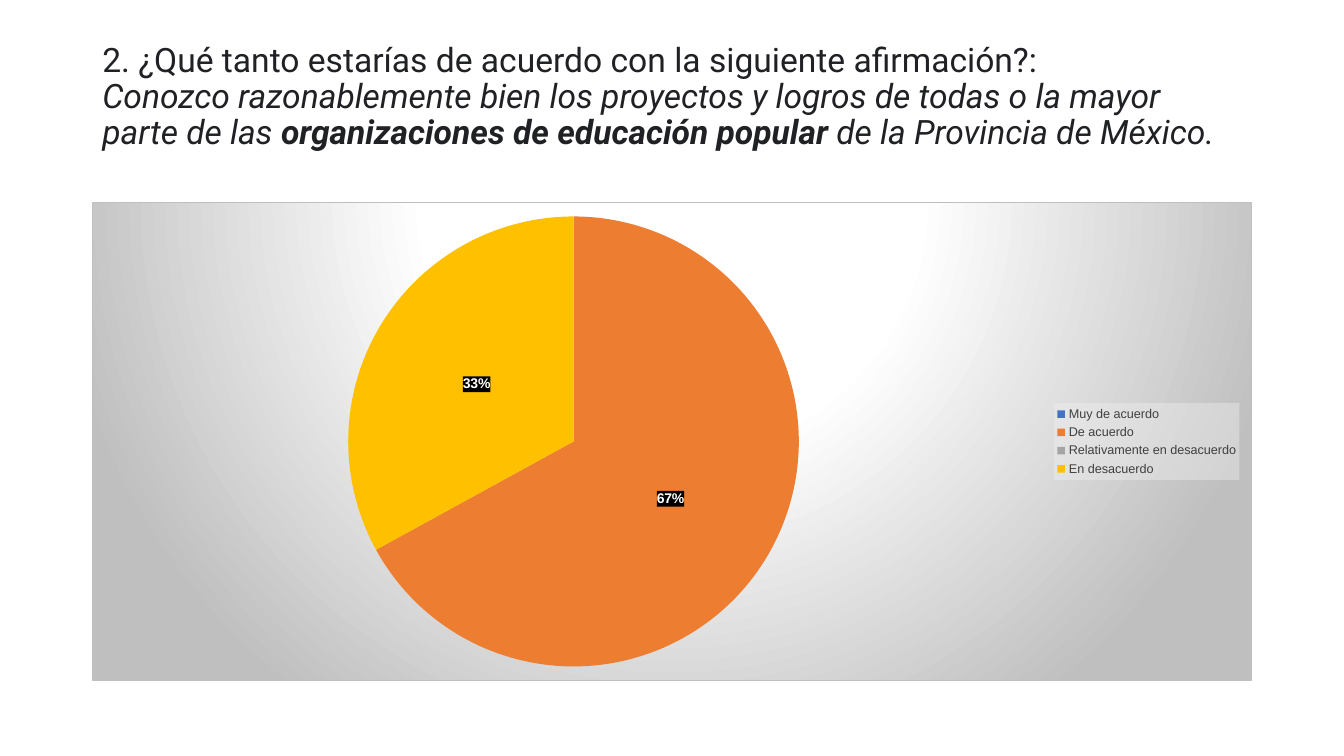
from pptx import Presentation
from pptx.chart.data import CategoryChartData
from pptx.dml.color import RGBColor
from pptx.enum.chart import XL_CHART_TYPE as CT, XL_LABEL_POSITION as LP, XL_LEGEND_POSITION as LG
from pptx.enum.text import MSO_ANCHOR
from pptx.oxml import parse_xml
from pptx.oxml.ns import nsdecls, qn
from pptx.util import Pt

QUESTION = "2. ¿Qué tanto estarías de acuerdo con la siguiente afirmación?:"
STATEMENT = [
    ("Conozco razonablemente bien los proyectos y logros de todas o la mayor parte de las ", False),
    ("organizaciones de educación popular", True),
    (" de la Provincia de México.", False),
]
INK = RGBColor(0x20, 0x21, 0x24)
BLACK = RGBColor(0, 0, 0)
WHITE = RGBColor(0xFF, 0xFF, 0xFF)
LEGEND_INK = RGBColor(0x40, 0x40, 0x40)
ANSWERS = [
    ("Muy de acuerdo", 0, RGBColor(0x44, 0x72, 0xC4)),
    ("De acuerdo", 67, RGBColor(0xED, 0x7D, 0x31)),
    ("Relativamente en desacuerdo", 0, RGBColor(0xA5, 0xA5, 0xA5)),
    ("En desacuerdo", 33, RGBColor(0xFF, 0xC0, 0x00)),
]
LEFT, WIDTH = Pt(66), Pt(828)
PIE_AREA = (0.22, 0.03, 0.39, 0.94)
LEGEND_AREA = (0.83, 0.42, 0.16, 0.16)
BACKDROP = (
    '<a:gradFill><a:gsLst>'
    '<a:gs pos="0"><a:srgbClr val="FFFFFF"/></a:gs>'
    '<a:gs pos="39000"><a:srgbClr val="FFFFFF"/></a:gs>'
    '<a:gs pos="100000"><a:srgbClr val="BFBFBF"/></a:gs></a:gsLst>'
    '<a:path path="circle"><a:fillToRect l="50000" t="-80000" r="50000" b="180000"/></a:path>'
    '</a:gradFill><a:ln w="9525"><a:solidFill><a:srgbClr val="BFBFBF"/></a:solidFill></a:ln>'
)


def chart_xml(tag, body):
    return parse_xml(f'<c:{tag} {nsdecls("c", "a")}>{body}</c:{tag}>')


def tint(color, alpha):
    return chart_xml("spPr", f'<a:solidFill><a:srgbClr val="{color}">'
                     f'<a:alpha val="{alpha * 1000}"/></a:srgbClr></a:solidFill>')


def layout(area, target=""):
    x, y, w, h = area
    return chart_xml("layout", f'<c:manualLayout>{target}<c:xMode val="edge"/><c:yMode val="edge"/>'
                     f'<c:x val="{x}"/><c:y val="{y}"/><c:w val="{w}"/><c:h val="{h}"/></c:manualLayout>')


def drop_layout(element):
    for old in element.findall(qn("c:layout")):
        element.remove(old)


def set_font(font, size, color, name="Arial", bold=False):
    font.size, font.name, font.bold = Pt(size), name, bold
    font.color.rgb = color


def add_title(s):
    tf = s.shapes.add_textbox(LEFT, Pt(28.8), WIDTH, Pt(104.4)).text_frame
    tf.word_wrap = True
    tf.vertical_anchor = MSO_ANCHOR.TOP
    tf.margin_top = Pt(2)
    p = tf.paragraphs[0]
    p.line_spacing = 0.9
    r = p.add_run()
    r.text = QUESTION
    set_font(r.font, 24, INK, "Roboto")
    p.add_line_break()
    for text, bold in STATEMENT:
        r = p.add_run()
        r.text = text
        set_font(r.font, 24, INK, "Roboto", bold)
        r.font.italic = True


def add_pie(s):
    data = CategoryChartData()
    data.categories = [name for name, _, _ in ANSWERS]
    data.add_series("Series 1", [value for _, value, _ in ANSWERS])
    chart = s.shapes.add_chart(CT.PIE, LEFT, Pt(144), WIDTH, Pt(342.72), data).chart
    chart.has_title = False
    set_font(chart.font, 10, BLACK)
    root = chart.element
    root.find(qn("c:chart")).addnext(chart_xml("spPr", BACKDROP))

    plot = chart.plots[0]
    plot.vary_by_categories = True
    area = root.find(".//" + qn("c:plotArea"))
    drop_layout(area)
    area.insert(0, layout(PIE_AREA, '<c:layoutTarget val="inner"/>'))

    series = plot.series[0]
    labels = series.data_labels
    labels.show_percentage, labels.show_value = True, False
    labels.number_format, labels.number_format_is_linked = "0%", False
    labels.position = LP.CENTER
    set_font(labels.font, 10, WHITE, bold=True)
    dlbls = series.points[0].data_label and root.find(".//" + qn("c:ser")).find(qn("c:dLbls"))
    dlbls.find(qn("c:txPr")).addprevious(tint("000000", 75))
    hidden = 0
    for i, (_, value, color) in enumerate(ANSWERS):
        fill = series.points[i].format.fill
        fill.solid()
        fill.fore_color.rgb = color
        if value == 0:
            dlbls.insert(hidden, chart_xml("dLbl", f'<c:idx val="{i}"/><c:delete val="1"/>'))
            hidden += 1

    chart.has_legend = True
    legend = chart.legend
    legend.position = LG.RIGHT
    legend.include_in_layout = False
    set_font(legend.font, 9, LEGEND_INK)
    box = root.find(".//" + qn("c:legend"))
    drop_layout(box)
    box.find(qn("c:legendPos")).addnext(layout(LEGEND_AREA))
    box.find(qn("c:txPr")).addprevious(tint("F2F2F2", 39))


def main():
    prs = Presentation()
    prs.slide_width, prs.slide_height = Pt(960), Pt(540)
    s = prs.slides.add_slide(prs.slide_layouts[6])
    add_title(s)
    add_pie(s)
    prs.save("out.pptx")


if __name__ == "__main__":
    main()
